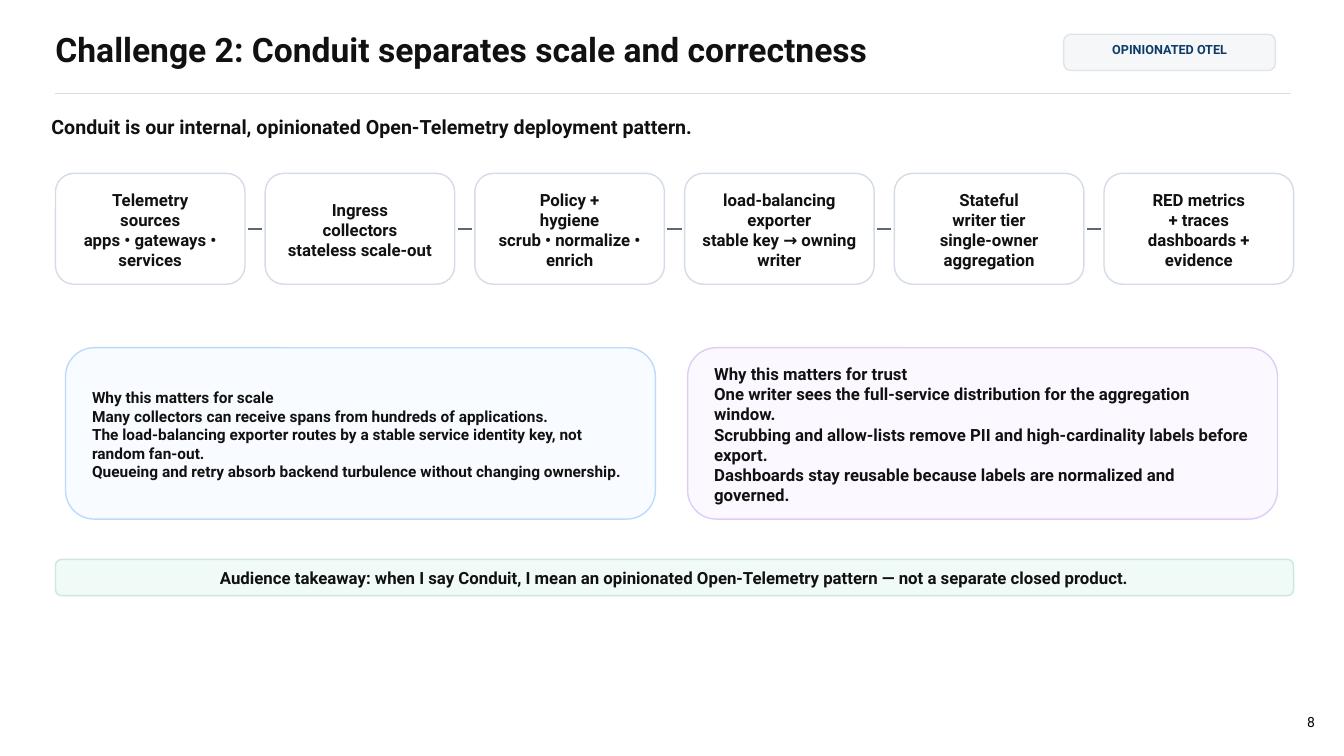
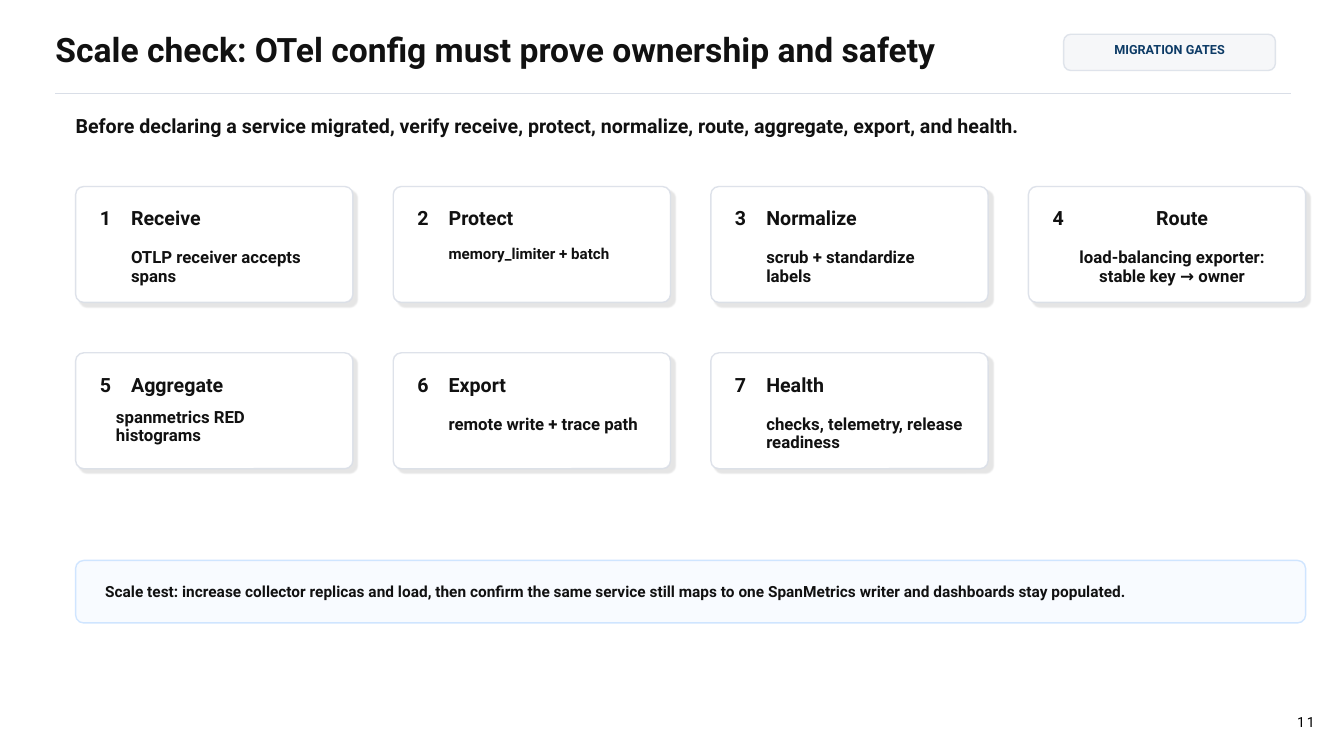
"""Build two slides on a telemetry deployment pattern and its migration gates."""
from copy import deepcopy

from lxml.etree import SubElement
from pptx import Presentation
from pptx.dml.color import RGBColor
from pptx.enum.shapes import MSO_CONNECTOR as Connector, MSO_SHAPE as Shape
from pptx.enum.text import MSO_ANCHOR as Anchor, PP_ALIGN as Align
from pptx.oxml.ns import qn
from pptx.util import Inches, Pt

FONT = "Roboto"
INK, NAVY, BLACK, WHITE = "111111", "0D3B66", "000000", "FFFFFF"
RULE, STEP_EDGE, LINK = "D9DEE7", "D4DCE8", "5D6778"
BADGE_FILL, BLUE_FILL, LILAC_FILL, MINT_FILL = "F6F7F9", "F8FBFF", "FBF8FF", "F0FAF6"
BLUE_EDGE, PALE_BLUE_EDGE, LILAC_EDGE, MINT_EDGE = "BEDAFA", "C9E2FF", "E0CCF5", "CDE8DC"
TIGHT = 0.92

STEPS = [
    ("Telemetry\nsources", "apps • gateways • services"),
    ("Ingress\ncollectors", "stateless scale-out"),
    ("Policy +\nhygiene", "scrub • normalize • enrich"),
    ("load-balancing\nexporter", "stable key → owning writer"),
    ("Stateful\nwriter tier", "single-owner aggregation"),
    ("RED metrics\n+ traces", "dashboards + evidence"),
]
SCALE_REASONS = [
    "Why this matters for scale",
    "Many collectors can receive spans from hundreds of applications.",
    "The load-balancing exporter routes by a stable service identity key, not random fan-out.",
    "Queueing and retry absorb backend turbulence without changing ownership.",
]
TRUST_REASONS = [
    "Why this matters for trust",
    "One writer sees the full-service distribution for the aggregation window.",
    "Scrubbing and allow-lists remove PII and high-cardinality labels before export.",
    "Dashboards stay reusable because labels are normalized and governed.",
]
GATES = [
    ("Receive", "OTLP receiver accepts spans", {}),
    ("Protect", "memory_limiter + batch", {"size": 10.8, "spacing": 0.72}),
    ("Normalize", "scrub + standardize labels", {}),
    ("Route", "load-balancing exporter:\nstable key → owner",
     {"align": Align.CENTER, "indent": 0.35, "width": 2.15}),
    ("Aggregate", "spanmetrics RED histograms", {"indent": 0.4, "drop": 0.55}),
    ("Export", "remote write + trace path", {}),
    ("Health", "checks, telemetry, release readiness", {}),
]


def rgb(value):
    """Turn a hex string into a colour."""
    return RGBColor.from_string(value)


def apply(target, values):
    """Set each named attribute on the target."""
    for name, value in values.items():
        setattr(target, name, value)


def write(holder, lines, size, color=INK, bold=True, align=Align.LEFT,
          spacing=None, anchor=Anchor.TOP, insets=(0, 0, 0, 0), tracking=None):
    """Fill a shape or text box with formatted paragraphs."""
    frame = holder.text_frame
    left, top, right, bottom = map(Inches, insets)
    apply(frame, {"word_wrap": True, "vertical_anchor": anchor,
                  "margin_left": left, "margin_top": top,
                  "margin_right": right, "margin_bottom": bottom})
    for index, line in enumerate(lines):
        paragraph = frame.add_paragraph() if index else frame.paragraphs[0]
        paragraph.text = line
        apply(paragraph, {"alignment": align, "line_spacing": spacing})
        for run in paragraph.runs:
            apply(run.font, {"name": FONT, "size": Pt(size), "bold": bold})
            run.font.color.rgb = rgb(color)
            if tracking:
                run.font._element.set("spc", str(tracking))
        for line_break in paragraph._p.findall(qn("a:br")):
            line_break.append(deepcopy(paragraph.runs[0].font._element))


def add_text(slide, box, text, size, **style):
    """Add a text box holding one paragraph."""
    write(slide.shapes.add_textbox(*map(Inches, box)), [text], size, **style)


def add_panel(slide, box, fill, edge, corner=None, opacity=None):
    """Add a rounded panel with a thin edge."""
    panel = slide.shapes.add_shape(Shape.ROUNDED_RECTANGLE, *map(Inches, box))
    panel.shadow.inherit = False
    panel.fill.solid()
    panel.fill.fore_color.rgb = rgb(fill)
    panel.line.color.rgb = rgb(edge)
    panel.line.width = Pt(1)
    if corner:
        panel.adjustments[0] = corner
    if opacity:
        edge_color = panel._element.spPr.find(qn("a:ln")).find(".//" + qn("a:srgbClr"))
        SubElement(edge_color, qn("a:alpha"), val=str(opacity * 1000))
    return panel


def cast_shadow(panel):
    """Give a panel a faint shadow to the lower right."""
    effects = panel._element.spPr.find(qn("a:effectLst"))
    shadow = SubElement(effects, qn("a:outerShdw"), blurRad=str(Pt(1)),
                        dist=str(Pt(4)), dir="2700000", algn="tl", rotWithShape="0")
    shade = SubElement(shadow, qn("a:srgbClr"), val=BLACK)
    SubElement(shade, qn("a:alpha"), val="10000")


def add_rule(slide, start, end, y, color, width):
    """Draw a horizontal line."""
    rule = slide.shapes.add_connector(
        Connector.STRAIGHT, Inches(start), Inches(y), Inches(end), Inches(y))
    rule.line.color.rgb = rgb(color)
    rule.line.width = Pt(width)
    SubElement(rule._element.spPr, qn("a:effectLst"))


def start_slide(deck, title, badge, number):
    """Add a slide with title, badge, header rule and page number."""
    slide = deck.slides.add_slide(deck.slide_layouts[6])
    add_text(slide, (12.72, 6.93, 0.32, 0.32), number, 10, color=BLACK, bold=False,
             align=Align.RIGHT, anchor=Anchor.BOTTOM, tracking=150)
    add_text(slide, (0.55, 0.33, 10, 0.45), title, 24, spacing=TIGHT)
    tag = add_panel(slide, (10.55, 0.34, 2.1, 0.36), BADGE_FILL, RULE, 0.194, 80)
    write(tag, [badge], 9, color=NAVY, align=Align.CENTER, spacing=TIGHT,
          insets=(0.1, 0.07, 0.1, 0))
    add_rule(slide, 0.55, 12.8, 0.93, RULE, 1)
    return slide


def add_pipeline(slide):
    """Lay out the pipeline steps and the links between them."""
    width, height, pitch, top = 1.88, 1.1, 2.08, 1.72
    for index, step in enumerate(STEPS):
        left = 0.55 + index * pitch
        if index:
            add_rule(slide, left - 0.17, left - 0.03, top + height / 2, LINK, 1.2)
        box = add_panel(slide, (left, top, width, height), WHITE, STEP_EDGE)
        write(box, step, 12, align=Align.CENTER, anchor=Anchor.MIDDLE,
              insets=(0.08, 0.1, 0.08, 0.08))


def add_reasons(slide, left, reasons, size, fill, edge):
    """Add a tinted panel listing reasons."""
    panel = add_panel(slide, (left, 3.45, 5.85, 1.7), fill, edge)
    write(panel, reasons, size, anchor=Anchor.MIDDLE, insets=(0.18, 0.12, 0.18, 0.1))


def add_gate(slide, left, top, number, name, check, size=12, spacing=TIGHT,
             align=Align.LEFT, indent=0.55, drop=0.62, width=1.95):
    """Add a numbered migration gate card."""
    cast_shadow(add_panel(slide, (left, top, 2.75, 1.15), WHITE, RULE, 0.07, 85))
    add_text(slide, (left + 0.12, top + 0.22, 0.35, 0.28), number, 14,
             align=Align.CENTER, spacing=TIGHT)
    add_text(slide, (left + 0.55, top + 0.22, 1.95, 0.25), name, 14,
             align=align, spacing=TIGHT)
    add_text(slide, (left + indent, top + drop, width, 0.25), check, size,
             align=align, spacing=spacing)


def build_pattern(deck):
    """Build the slide on the deployment pattern."""
    slide = start_slide(deck, "Challenge 2: Conduit separates scale and correctness",
                        "OPINIONATED OTEL", "8")
    add_text(slide, (0.43, 1.1, 12.4, 0.32),
             "Conduit is our internal, opinionated Open-Telemetry deployment pattern.",
             14, insets=(0.08, 0.04, 0.08, 0.04))
    add_pipeline(slide)
    add_reasons(slide, 0.65, SCALE_REASONS, 11, BLUE_FILL, BLUE_EDGE)
    add_reasons(slide, 6.82, TRUST_REASONS, 12, LILAC_FILL, LILAC_EDGE)
    takeaway = add_panel(slide, (0.55, 5.55, 12.28, 0.36), MINT_FILL, MINT_EDGE)
    write(takeaway, ["Audience takeaway: when I say Conduit, I mean an opinionated "
                     "Open-Telemetry pattern — not a separate closed product."],
          12, align=Align.CENTER, anchor=Anchor.MIDDLE, insets=(0.08, 0.04, 0.08, 0.04))


def build_gates(deck):
    """Build the slide on the migration gates."""
    slide = start_slide(deck, "Scale check: OTel config must prove ownership and safety",
                        "MIGRATION GATES", "11")
    add_text(slide, (0.75, 1.15, 11.8, 0.3),
             "Before declaring a service migrated, verify receive, protect, normalize, "
             "route, aggregate, export, and health.", 14, spacing=TIGHT)
    for index, (name, check, variation) in enumerate(GATES):
        row, column = divmod(index, 4)
        add_gate(slide, 0.75 + column * 3.15, 1.85 + row * 1.65,
                 str(index + 1), name, check, **variation)
    scale_test = add_panel(slide, (0.75, 5.56, 12.2, 0.62), BLUE_FILL, PALE_BLUE_EDGE, 0.129, 85)
    write(scale_test, ["Scale test: increase collector replicas and load, then confirm the "
                       "same service still maps to one SpanMetrics writer and dashboards "
                       "stay populated."],
          11, spacing=TIGHT, insets=(0.27, 0.21, 0.27, 0))


def main():
    """Build and save the deck."""
    deck = Presentation()
    apply(deck, {"slide_width": Inches(13.33), "slide_height": Inches(7.5)})
    build_pattern(deck)
    build_gates(deck)
    deck.save("out.pptx")


if __name__ == "__main__":
    main()
